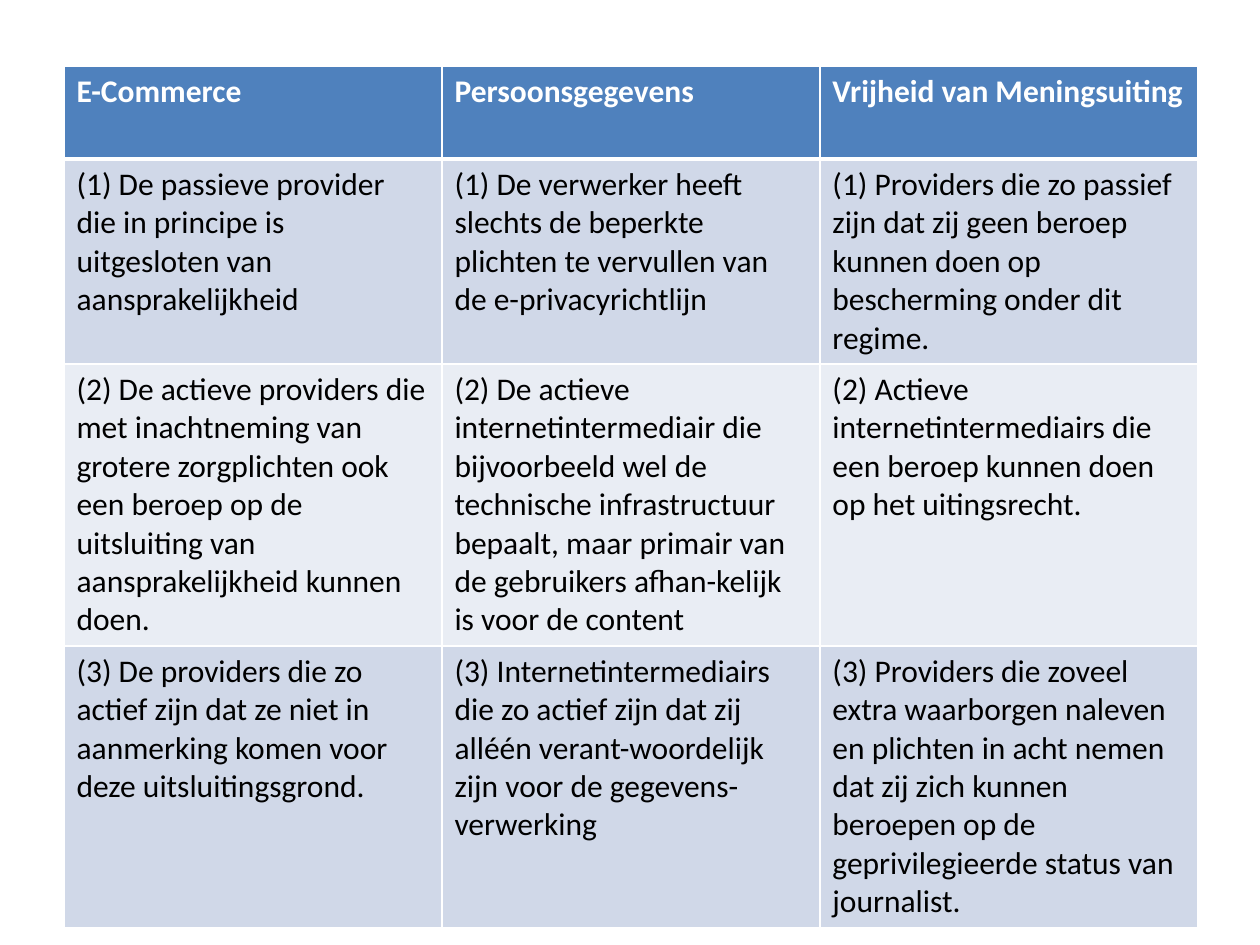
from lxml import etree
from pptx import Presentation
from pptx import util as u
from pptx.dml.color import RGBColor
from pptx.oxml import ns

PX = 914400 // 126  # EMU per pixel
LEFT, TOP, WIDE = 64, 66, 378
HIGH = [93, 205, 282, 282]
HEAD, BANDS = "4F81BD", ["D0D8E8", "E9EDF4"]
WHITE, BLACK = "FFFFFF", "000000"

ROWS = [
    ["E-Commerce", "Persoonsgegevens", "Vrijheid van Meningsuiting"],
    ["(1) De passieve provider die in principe is uitgesloten van "
     "aansprakelijkheid",
     "(1) De verwerker heeft slechts de beperkte plichten te vervullen van "
     "de e-privacyrichtlijn",
     "(1) Providers die zo passief zijn dat zij geen beroep kunnen doen op "
     "bescherming onder dit regime."],
    ["(2) De actieve providers die met inachtneming van grotere zorgplichten "
     "ook een beroep op de uitsluiting van aansprakelijkheid kunnen doen.",
     "(2) De actieve internetintermediair die bijvoorbeeld wel de technische "
     "infrastructuur bepaalt, maar primair van de gebruikers afhan-kelijk is "
     "voor de content",
     "(2) Actieve internetintermediairs die een beroep kunnen doen op het "
     "uitingsrecht."],
    ["(3) De providers die zo actief zijn dat ze niet in aanmerking komen "
     "voor deze uitsluitingsgrond.",
     "(3) Internetintermediairs die zo actief zijn dat zij alléén "
     "verant-woordelijk zijn voor de gegevens-verwerking",
     "(3) Providers die zoveel extra waarborgen naleven en plichten in acht "
     "nemen dat zij zich kunnen beroepen op de geprivilegieerde status van "
     "journalist."],
]


def px(n):
    return u.Emu(n * PX)


def paint(item, tint):
    """Give a fill or a font a solid colour."""
    if hasattr(item, "solid"):
        item.solid()
        item.fore_color.rgb = RGBColor.from_string(tint)
    else:
        item.color.rgb = RGBColor.from_string(tint)


def edge(cell, side, pts):
    """Draw one white cell border."""
    props = cell._tc.get_or_add_tcPr()
    line = etree.SubElement(props, ns.qn("a:ln" + side), w=str(u.Pt(pts)))
    fill = etree.SubElement(line, ns.qn("a:solidFill"))
    etree.SubElement(fill, ns.qn("a:srgbClr"), val=WHITE)


def style(cell, words, row):
    head = row == 0
    # Borders come before the fill in the cell properties
    for side in "LRTB":
        thick = (row, side) in [(0, "B"), (1, "T")]
        edge(cell, side, 3 if thick else 1)
    paint(cell.fill, HEAD if head else BANDS[(row - 1) % 2])

    cell.text_frame.text = words
    font = cell.text_frame.paragraphs[0].runs[0].font
    font.name, font.size, font.bold = "Calibri", u.Pt(18), head
    paint(font, WHITE if head else BLACK)


def grid(slide):
    cols = len(ROWS[0])
    table = slide.shapes.add_table(
        len(ROWS), cols, px(LEFT), px(TOP), px(cols * WIDE), px(sum(HIGH))
    ).table
    for col in table.columns:
        col.width = px(WIDE)
    for r, line in enumerate(ROWS):
        table.rows[r].height = px(HIGH[r])
        for c, words in enumerate(line):
            style(table.cell(r, c), words, r)


def main():
    deck = Presentation()
    deck.slide_width, deck.slide_height = px(1260), px(945)
    slide = deck.slides.add_slide(deck.slide_layouts[6])
    paint(slide.background.fill, WHITE)
    # Comparison of the three legal regimes
    grid(slide)
    deck.save("out.pptx")


if __name__ == "__main__":
    main()
